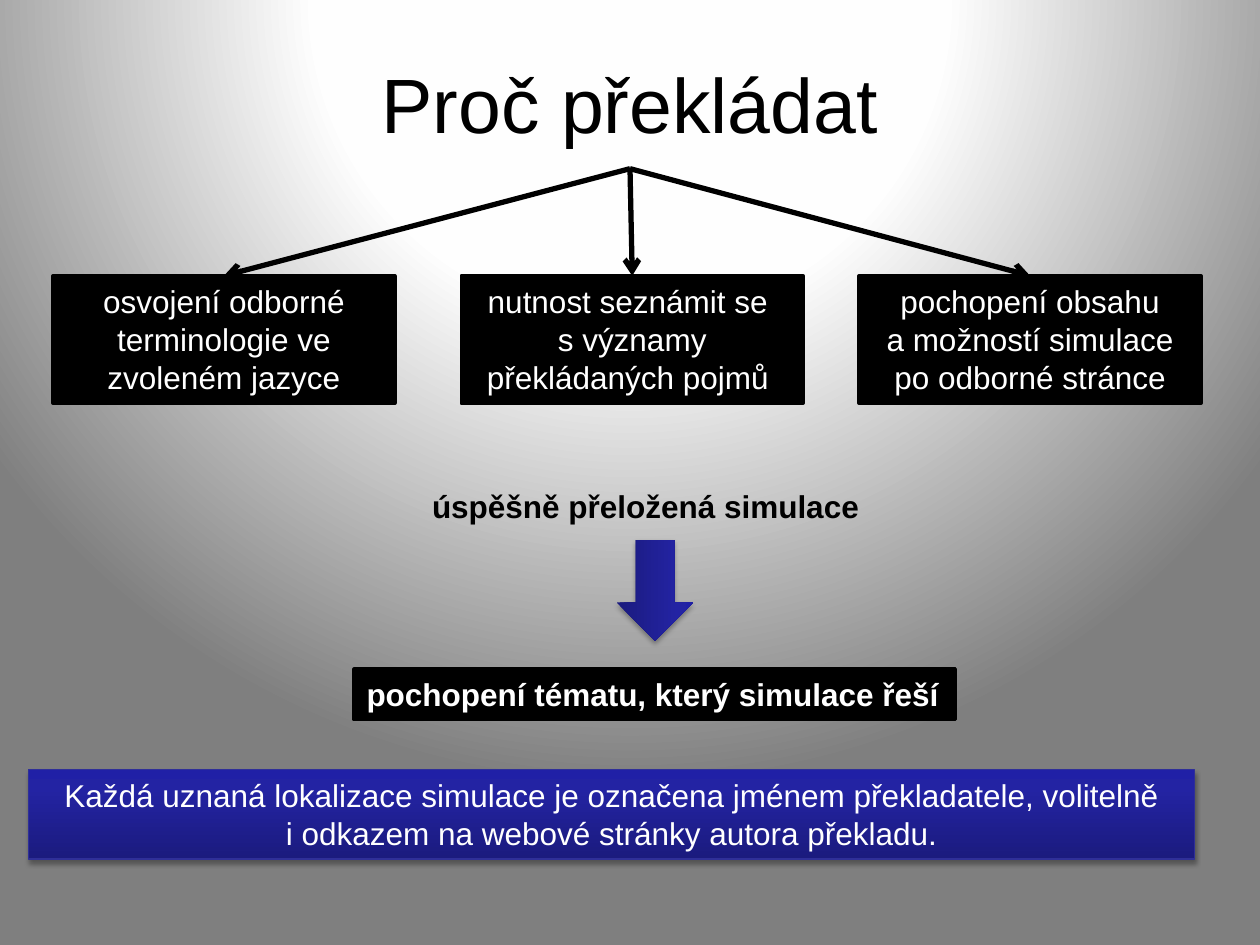
import pptx
import pptx.dml.color
import pptx.enum.shapes
import pptx.enum.text
import pptx.oxml.ns
import pptx.util
from lxml import etree

Cm = pptx.util.Cm
Pt = pptx.util.Pt
qn = pptx.oxml.ns.qn
RGBColor = pptx.dml.color.RGBColor
MSO_SHAPE = pptx.enum.shapes.MSO_SHAPE
PP_ALIGN = pptx.enum.text.PP_ALIGN
MSO_ANCHOR = pptx.enum.text.MSO_ANCHOR

BLACK = RGBColor(0x00, 0x00, 0x00)
WHITE = RGBColor(0xFF, 0xFF, 0xFF)
NEAR_WHITE = RGBColor(0xFE, 0xFE, 0xFE)
GREY = RGBColor(0x7F, 0x7F, 0x7F)
NAVY = RGBColor(0x1B, 0x1B, 0x7E)
BLUE = RGBColor(0x23, 0x23, 0xA3)
BRIGHT_BLUE = RGBColor(0x20, 0x20, 0xA6)
EDGE_BLUE = RGBColor(0x2F, 0x2F, 0x98)


def add(parent, tag, **attrs):
    return etree.SubElement(parent, qn(tag), {k: str(v) for k, v in attrs.items()})


class Deck:
    font = "Arial"
    blues = ((0, NAVY), (80, BLUE), (100, BRIGHT_BLUE))

    def __init__(self, width, height):
        self.prs = pptx.Presentation()
        self.prs.slide_width, self.prs.slide_height = Cm(width), Cm(height)
        self.s = self.prs.slides.add_slide(self.prs.slide_layouts[6])

    def gradient(self, owner, stops):
        owner.fill.gradient()
        grad = self.s.background._cSld if owner is self.s.background else owner._element
        grad = grad.find(".//" + qn("a:gradFill"))
        for child in list(grad):
            grad.remove(child)
        grad.set("rotWithShape", "1")
        gs_lst = add(grad, "a:gsLst")
        for pos, color in stops:
            add(add(gs_lst, "a:gs", pos=pos * 1000), "a:srgbClr", val=color)
        return grad

    def background(self, stops):
        bg = self.s.background
        bg.fill.gradient()
        grad = self.s._element.find(".//" + qn("a:gradFill"))
        self.fill_stops(grad, stops)
        circle = add(grad, "a:path", path="circle")
        add(circle, "a:fillToRect", l=50000, t=-80000, r=50000, b=180000)

    def fill_stops(self, grad, stops):
        for child in list(grad):
            grad.remove(child)
        grad.set("rotWithShape", "1")
        gs_lst = add(grad, "a:gsLst")
        for pos, color in stops:
            add(add(gs_lst, "a:gs", pos=pos * 1000), "a:srgbClr", val=str(color))

    def text(self, sp, lines, color, size=18, bold=False, align=PP_ALIGN.CENTER,
             anchor=MSO_ANCHOR.TOP):
        tf = sp.text_frame
        tf.word_wrap = True
        tf.vertical_anchor = anchor
        tf.text = "\n".join(lines)
        for p in tf.paragraphs:
            p.alignment = align
            p.font.name, p.font.size = self.font, Pt(size)
            p.font.bold, p.font.color.rgb = bold, color

    def label(self, x, y, w, h, lines, **style):
        sp = self.s.shapes.add_textbox(Cm(x), Cm(y), Cm(w), Cm(h))
        self.text(sp, lines, BLACK, **style)

    def box(self, x, y, w, h, lines, **style):
        sp = self.s.shapes.add_shape(MSO_SHAPE.RECTANGLE, Cm(x), Cm(y), Cm(w), Cm(h))
        sp.shadow.inherit = False
        sp.fill.solid()
        sp.fill.fore_color.rgb = BLACK
        sp.line.color.rgb, sp.line.width = BLACK, Pt(2)
        self.text(sp, lines, WHITE, **style)

    def blue_shape(self, kind, x, y, w, h):
        sp = self.s.shapes.add_shape(kind, Cm(x), Cm(y), Cm(w), Cm(h))
        sp.line.fill.background()
        sp.fill.gradient()
        grad = sp._element.spPr.find(qn("a:gradFill"))
        self.fill_stops(grad, self.blues)
        add(grad, "a:lin", ang=270 * 60000, scaled=0)
        sp.shadow.inherit = False
        effects = sp._element.spPr.find(qn("a:effectLst"))
        shadow = add(effects, "a:outerShdw", blurRad=Pt(3.1), dist=Pt(1.8),
                     dir=90 * 60000, rotWithShape=0)
        add(add(shadow, "a:srgbClr", val=str(BLACK)), "a:alpha", val=35000)
        return sp

    def banner(self, x, y, w, h, lines):
        sp = self.blue_shape(MSO_SHAPE.RECTANGLE, x, y, w, h)
        sp.line.color.rgb, sp.line.width = EDGE_BLUE, Pt(0.75)
        self.text(sp, lines, WHITE)

    def down_arrow(self, x, y, w, h):
        sp = self.blue_shape(MSO_SHAPE.RIGHT_ARROW, x, y, w, h)
        sp.rotation = 90

    def arrow(self, x1, y1, x2, y2):
        cx = self.s.shapes.add_connector(
            pptx.enum.shapes.MSO_CONNECTOR.STRAIGHT, Cm(x1), Cm(y1), Cm(x2), Cm(y2))
        cx.line.color.rgb, cx.line.width = BLACK, Pt(3)
        add(cx.line._get_or_add_ln(), "a:tailEnd", type="arrow")
        add(cx._element.spPr, "a:effectLst")


def main():
    deck = Deck(25.4, 19.05)
    deck.background(((0, WHITE), (40, NEAR_WHITE), (100, GREY)))
    deck.label(1.27, 0.76, 22.86, 2.64, ["Proč překládat"], size=44,
               anchor=MSO_ANCHOR.MIDDLE)

    box_top, box_width = 5.56, 6.89
    reasons = (
        (1.07, ["osvojení odborné terminologie ve zvoleném jazyce"]),
        (9.3, ["nutnost seznámit se ", "s významy překládaných pojmů "]),
        (17.32, ["pochopení obsahu", "a možností simulace po odborné stránce"]),
    )
    for x, lines in reasons:
        deck.box(x, box_top, box_width, 2.57, lines)

    deck.label(8.46, 9.7, 9.37, 1.02, ["úspěšně přeložená simulace"],
               bold=True, align=PP_ALIGN.LEFT)
    deck.box(7.14, 13.49, 12.12, 1.02, ["pochopení tématu, který simulace řeší"],
             bold=True, align=PP_ALIGN.LEFT)
    deck.banner(0.58, 15.52, 23.5, 1.8, [
        "Každá uznaná lokalizace simulace je označena jménem překladatele, volitelně",
        "i odkazem na webové stránky autora překladu.",
    ])
    for x, _ in reasons:
        deck.arrow(12.7, 3.4, x + box_width / 2, box_top)
    deck.down_arrow(12.19, 11.13, 2.03, 1.55)

    deck.prs.save("out.pptx")


if __name__ == "__main__":
    main()
